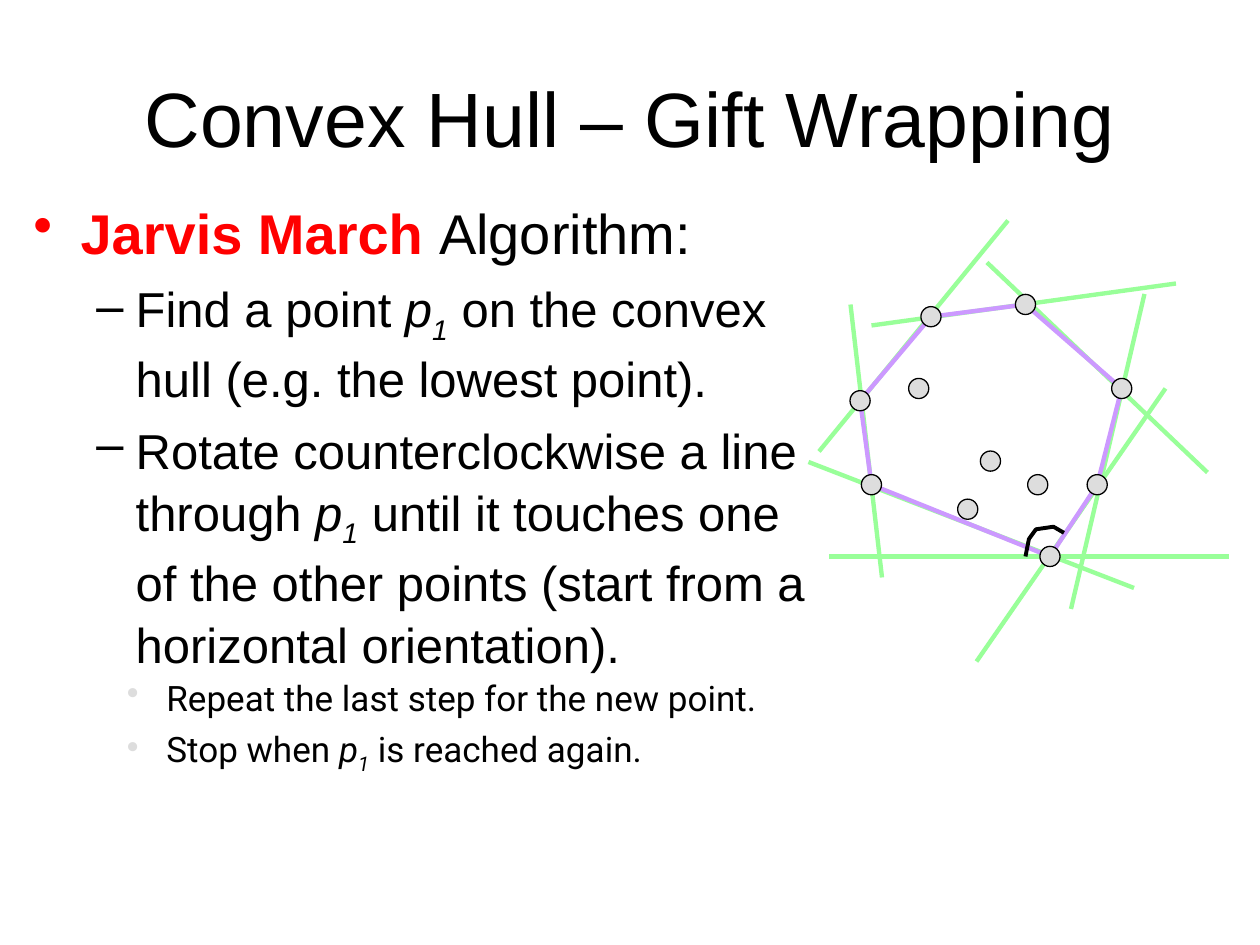
from pptx import Presentation
from pptx.dml.color import RGBColor
from pptx.enum import shapes, text
from pptx.oxml.xmlchemy import OxmlElement
from pptx.util import Pt

COLORS = {"ink": "000000", "red": "FF0000", "line": "99FF99",
          "hull": "CC99FF", "dot": "DDDDDD"}
HULL = [(138, 192), (165, 151), (179, 96), (124, 48), (70, 55), (29.5, 103), (36, 151)]
INNER = [(63, 96), (91, 165), (104, 137.5), (131, 151)]
TANGENTS = [((12, 192), (240, 192)), ((96, 252), (204, 96)),
            ((150, 222), (192, 42)), ((228, 144), (102, 24)),
            ((210, 36), (36, 60)), ((114, 0), (6, 132)),
            ((24, 48), (42, 204)), ((0, 138), (186, 210))]
ANGLE = [(146, 178.5), (140, 175), (130, 176.5), (126, 182), (124, 192)]
DOT = 11.5
P1 = [("p", "italic"), ("1", "sub")]


def rgb(name):
    return RGBColor.from_string(COLORS[name])


def add_box(s, box):
    tf = s.shapes.add_textbox(*map(Pt, box)).text_frame
    tf.word_wrap = True
    return tf


def add_run(p, words, style, size, face):
    r = p.add_run()
    r.text = words
    r.font.size, r.font.name = Pt(size), face
    r.font.bold = style == "key"
    r.font.italic = style in ("italic", "sub")
    r.font.color.rgb = rgb("red" if style == "key" else "ink")
    if style == "sub":
        r.font._element.set("baseline", "-25000")


def set_bullet(p, char, margin, indent, color):
    pPr = p._p.get_or_add_pPr()
    pPr.set("marL", str(Pt(margin)))
    pPr.set("indent", str(Pt(-indent)))
    if color:
        buClr = OxmlElement("a:buClr")
        srgb = OxmlElement("a:srgbClr")
        srgb.set("val", COLORS[color])
        buClr.append(srgb)
        pPr.append(buClr)
    buChar = OxmlElement("a:buChar")
    buChar.set("char", char)
    pPr.append(buChar)


def add_title(s, box, words):
    tf = add_box(s, box)
    tf.vertical_anchor = text.MSO_ANCHOR.MIDDLE
    p = tf.paragraphs[0]
    p.alignment = text.PP_ALIGN.CENTER
    add_run(p, words, None, 44, "Arial")


def add_list(s, box, items, face, color=None):
    tf = add_box(s, box)
    for i, (level, char, size, runs) in enumerate(items):
        p = tf.paragraphs[0] if i == 0 else tf.add_paragraph()
        p.level = level
        margin, indent = (58.5, 22.5) if level else (27, 27)
        set_bullet(p, char, margin, indent, color)
        p.line_spacing = 1.05
        if i:
            p.space_before = Pt(size * 0.2)
        for words, style in runs:
            add_run(p, words, style, size, face)


def add_path(s, points, color, width):
    fb = s.shapes.build_freeform(*points[0])
    fb.add_line_segments(points[1:], close=False)
    sp = fb.convert_to_shape()
    sp.shadow.inherit = False
    sp.fill.background()
    sp.line.color.rgb = rgb(color)
    sp.line.width = Pt(width)


def add_tangent(s, start, end):
    sp = s.shapes.add_connector(shapes.MSO_CONNECTOR.STRAIGHT, *start, *end)
    sp.line.color.rgb = rgb("line")
    sp.line.width = Pt(2.5)
    sp._element.spPr.append(OxmlElement("a:effectLst"))


def add_dot(group, center):
    x, y = center
    sp = group.shapes.add_shape(shapes.MSO_SHAPE.OVAL, x - Pt(DOT / 2), y - Pt(DOT / 2),
                                Pt(DOT), Pt(DOT))
    sp.shadow.inherit = False
    sp.fill.solid()
    sp.fill.fore_color.rgb = rgb("dot")
    sp.line.color.rgb = rgb("ink")
    sp.line.width = Pt(0.75)


def add_diagram(s, left, top):
    def place(points):
        return [(Pt(left + x), Pt(top + y)) for x, y in points]

    for ends in TANGENTS:
        add_tangent(s, *place(ends))
    for edge in zip(HULL, HULL[1:] + HULL[:1]):
        add_path(s, place(edge), "hull", 2.5)
    group = s.shapes.add_group_shape()
    for center in place(HULL + INNER):
        add_dot(group, center)
    add_path(s, place(ANGLE), "ink", 2.25)


def main():
    prs = Presentation()
    prs.slide_width, prs.slide_height = Pt(720), Pt(540)
    s = prs.slides.add_slide(prs.slide_layouts[6])
    add_title(s, (36, 21.6, 648, 90), "Convex Hull – Gift Wrapping")
    add_list(s, (12, 108, 462, 336), [
        (0, "•", 32, [("Jarvis March ", "key"), ("Algorithm:", None)]),
        (1, "–", 28, [("Find a point ", None), *P1,
                      (" on the convex hull (e.g. the lowest point).", None)]),
        (1, "–", 28, [("Rotate counterclockwise a line through ", None), *P1,
                      (" until it touches one of the other points "
                       "(start from a horizontal orientation).", None)]),
    ], "Arial")
    add_diagram(s, 462, 126)
    add_list(s, (29.5, 381.6, 684, 156), [
        (1, "•", 20, [("Repeat the last step for the new point.", None)]),
        (1, "•", 20, [("Stop when ", None), *P1, (" is reached again.", None)]),
    ], "Roboto", "dot")
    prs.save("out.pptx")


if __name__ == "__main__":
    main()
